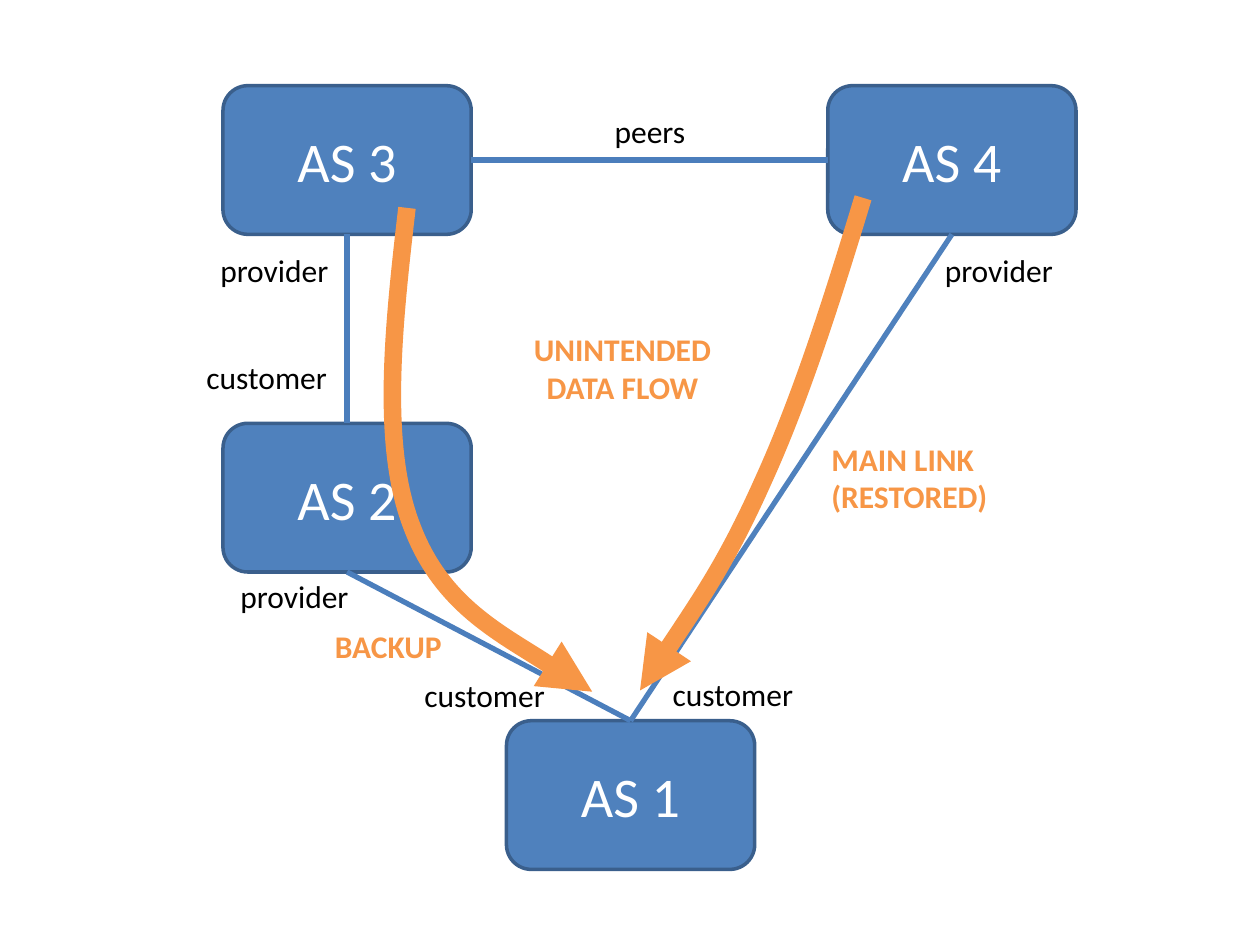
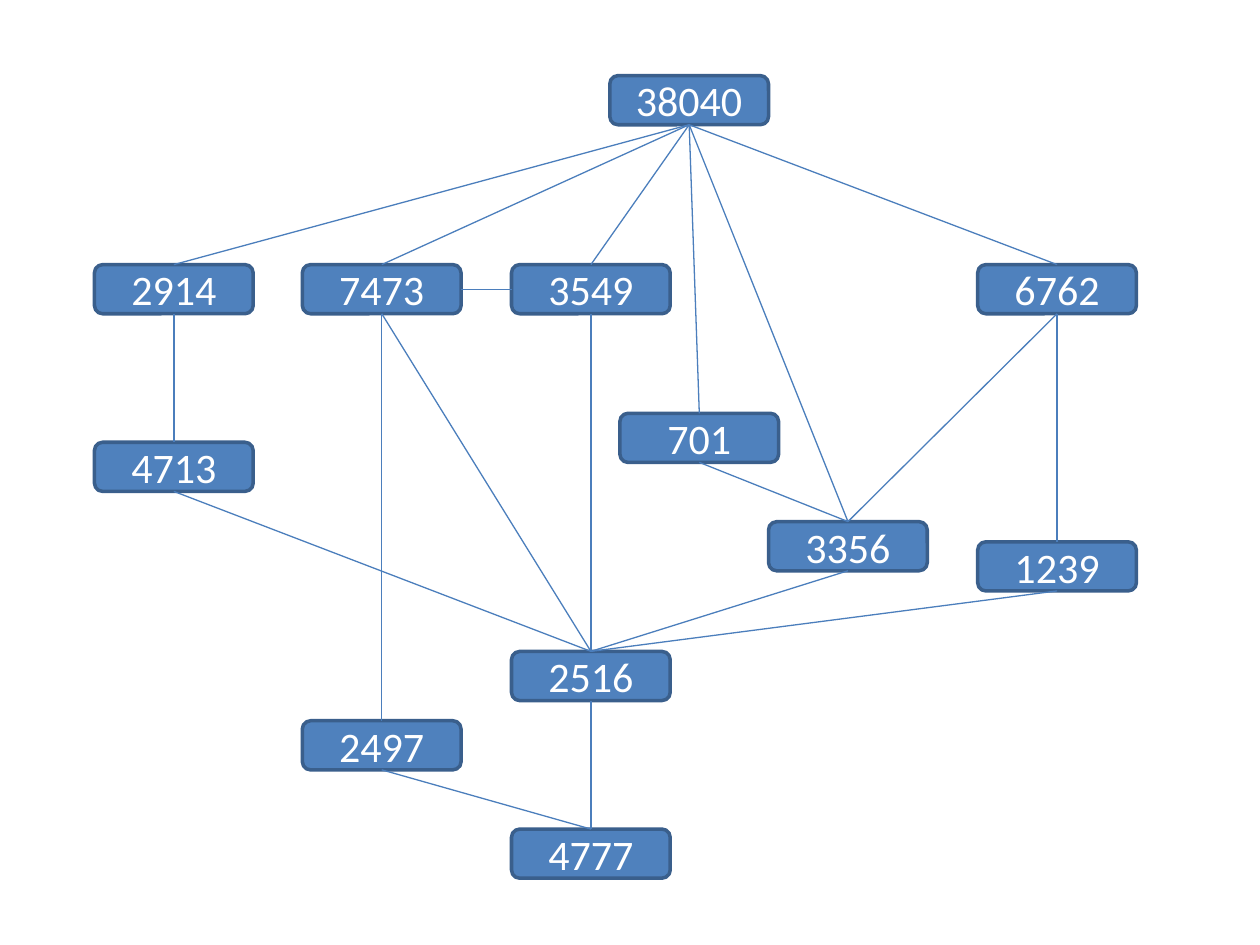
"""Draw two network maps of linked autonomous systems."""
from dataclasses import dataclass
from enum import IntEnum
from typing import NamedTuple

from lxml.etree import SubElement as add_sub
from pptx import Presentation
from pptx.dml.color import RGBColor as Rgb
from pptx.enum.shapes import MSO_CONNECTOR as Wire, MSO_SHAPE as Form
from pptx.enum.text import MSO_ANCHOR as Anchor, MSO_AUTO_SIZE as Fit, PP_ALIGN as Align
from pptx.oxml.ns import qn
from pptx.slide import Slide
from pptx.text.text import TextFrame
from pptx.util import Pt

PX = 9144


@dataclass(frozen=True)
class Theme:
    font: str = "Calibri"
    fill: str = "4F81BD"
    edge: str = "3A5F8C"
    wire: str = "4B7EBC"
    flow: str = "F79646"
    dark: str = "000000"
    light: str = "FFFFFF"
    big: int = 32
    mid: int = 24
    small: int = 18
    border: float = 2
    thick: float = 3
    thin: float = 0.75
    arrow: float = 10


class Port(IntEnum):
    TOP = 0
    LEFT = 1
    BOTTOM = 2
    RIGHT = 3


class Node(NamedTuple):
    name: str
    left: int
    top: int


class Link(NamedTuple):
    start: str
    end: str
    leave: Port = Port.BOTTOM
    enter: Port = Port.TOP
    color: str = Theme.wire


class Label(NamedTuple):
    text: str
    left: int
    top: int
    width: int
    bold: bool = False
    align: Align = Align.LEFT


class Flow(NamedTuple):
    start: tuple[int, int]
    bends: list[tuple[int, int]]


class Map(NamedTuple):
    size: tuple[int, int]
    type_size: int
    weight: float
    nodes: list[Node]
    links: list[Link]
    labels: list[Label] = []
    flows: list[Flow] = []


LOOK = Theme()

PEERS = Map(
    (197, 118), LOOK.big, LOOK.thick,
    [Node("AS 1", 402, 572), Node("AS 2", 177, 336),
     Node("AS 3", 177, 68), Node("AS 4", 657, 68)],
    [Link("AS 3", "AS 2"), Link("AS 3", "AS 4", Port.RIGHT, Port.LEFT),
     Link("AS 2", "AS 1"), Link("AS 4", "AS 1", color=LOOK.fill)],
    [Label("peers", 478, 84, 77),
     Label("customer", 154, 279, 117), Label("provider", 165, 194, 107),
     Label("customer", 524, 531, 117), Label("customer", 327, 532, 117),
     Label("provider", 181, 453, 107), Label("provider", 740, 194, 107),
     Label("MAIN LINK\n(RESTORED)", 650, 344, 145, True),
     Label("BACKUP", 256, 493, 106, True),
     Label("UNINTENDED\nDATA FLOW", 413, 257, 162, True, Align.CENTER)],
    [Flow((323, 165), [(312, 260), (302, 354), (327, 418),
                       (351, 482), (470, 549), (470, 549)]),
     Flow((685, 157), [(661, 236), (636, 315), (606, 381),
                       (577, 446), (542, 497), (508, 548)])],
)

ROUTES = Map(
    (126, 39), LOOK.mid, LOOK.thin,
    [Node("38040", 484, 60),
     Node("2914", 75, 210), Node("7473", 240, 210),
     Node("3549", 406, 210), Node("6762", 776, 210),
     Node("701", 492, 328), Node("4713", 75, 351),
     Node("3356", 610, 414), Node("1239", 776, 430),
     Node("2516", 406, 517), Node("2497", 240, 572), Node("4777", 406, 658)],
    [*(Link("38040", name) for name in ("2914", "7473", "3549", "701", "3356", "6762")),
     *(Link(name, "2516") for name in ("4713", "7473", "3549", "3356", "1239")),
     *(Link(name, "4777") for name in ("2516", "2497")),
     *(Link(name, "3356") for name in ("701", "6762")),
     Link("2914", "4713"), Link("7473", "2497"), Link("6762", "1239"),
     Link("7473", "3549", Port.RIGHT, Port.LEFT)],
)


def write(frame: TextFrame, text: str, size: int, color: str,
          align: Align, bold: bool = False) -> None:
    frame.text = text
    for para in frame.paragraphs:
        para.alignment = align
        for run in para.runs:
            run.font.name = LOOK.font
            run.font.size = Pt(size)
            run.font.bold = bold
            run.font.color.rgb = Rgb.from_string(color)


def stroke(shape, color: str, weight: float) -> None:
    shape.line.color.rgb = Rgb.from_string(color)
    shape.line.width = Pt(weight)


def draw_node(slide: Slide, node: Node, plan: Map):
    width, height = plan.size
    box = slide.shapes.add_shape(Form.ROUNDED_RECTANGLE, node.left * PX, node.top * PX,
                                 width * PX, height * PX)
    box.shadow.inherit = False
    box.fill.solid()
    box.fill.fore_color.rgb = Rgb.from_string(LOOK.fill)
    stroke(box, LOOK.edge, LOOK.border)
    box.text_frame.vertical_anchor = Anchor.MIDDLE
    write(box.text_frame, node.name, plan.type_size, LOOK.light, Align.CENTER)
    return box


def draw_link(slide: Slide, link: Link, boxes: dict, weight: float) -> None:
    line = slide.shapes.add_connector(Wire.STRAIGHT, 0, 0, 0, 0)
    line.begin_connect(boxes[link.start], link.leave)
    line.end_connect(boxes[link.end], link.enter)
    stroke(line, link.color, weight)
    add_sub(line._element.spPr, qn("a:effectLst"))


def draw_label(slide: Slide, label: Label) -> None:
    height = 71 if "\n" in label.text else 40
    box = slide.shapes.add_textbox(label.left * PX, label.top * PX,
                                   label.width * PX, height * PX)
    box.text_frame.word_wrap = False
    box.text_frame.auto_size = Fit.SHAPE_TO_FIT_TEXT
    color = LOOK.flow if label.bold else LOOK.dark
    write(box.text_frame, label.text, LOOK.small, color, label.align, label.bold)


def draw_flow(slide: Slide, flow: Flow) -> None:
    pen = slide.shapes.build_freeform(*flow.start, scale=PX)
    pen.add_line_segments(flow.bends, close=False)
    curve = pen.convert_to_shape()
    curve.shadow.inherit = False
    curve.fill.background()
    stroke(curve, LOOK.flow, LOOK.arrow)
    add_sub(curve.line._get_or_add_ln(), qn("a:tailEnd"), type="triangle")
    track = next(curve._element.iter(qn("a:path")))
    steps = track.findall(qn("a:lnTo"))
    for first in range(0, len(steps), 3):
        bend = add_sub(track, qn("a:cubicBezTo"))
        for step in steps[first:first + 3]:
            bend.append(step[0])
            track.remove(step)


def draw_map(slide: Slide, plan: Map) -> None:
    boxes = {node.name: draw_node(slide, node, plan) for node in plan.nodes}
    for link in plan.links:
        draw_link(slide, link, boxes, plan.weight)
    for label in plan.labels:
        draw_label(slide, label)
    for flow in plan.flows:
        draw_flow(slide, flow)


def main() -> None:
    deck = Presentation()
    deck.slide_width, deck.slide_height = 1000 * PX, 750 * PX
    for plan in (PEERS, ROUTES):
        draw_map(deck.slides.add_slide(deck.slide_layouts[6]), plan)
    deck.save("out.pptx")


if __name__ == "__main__":
    main()
